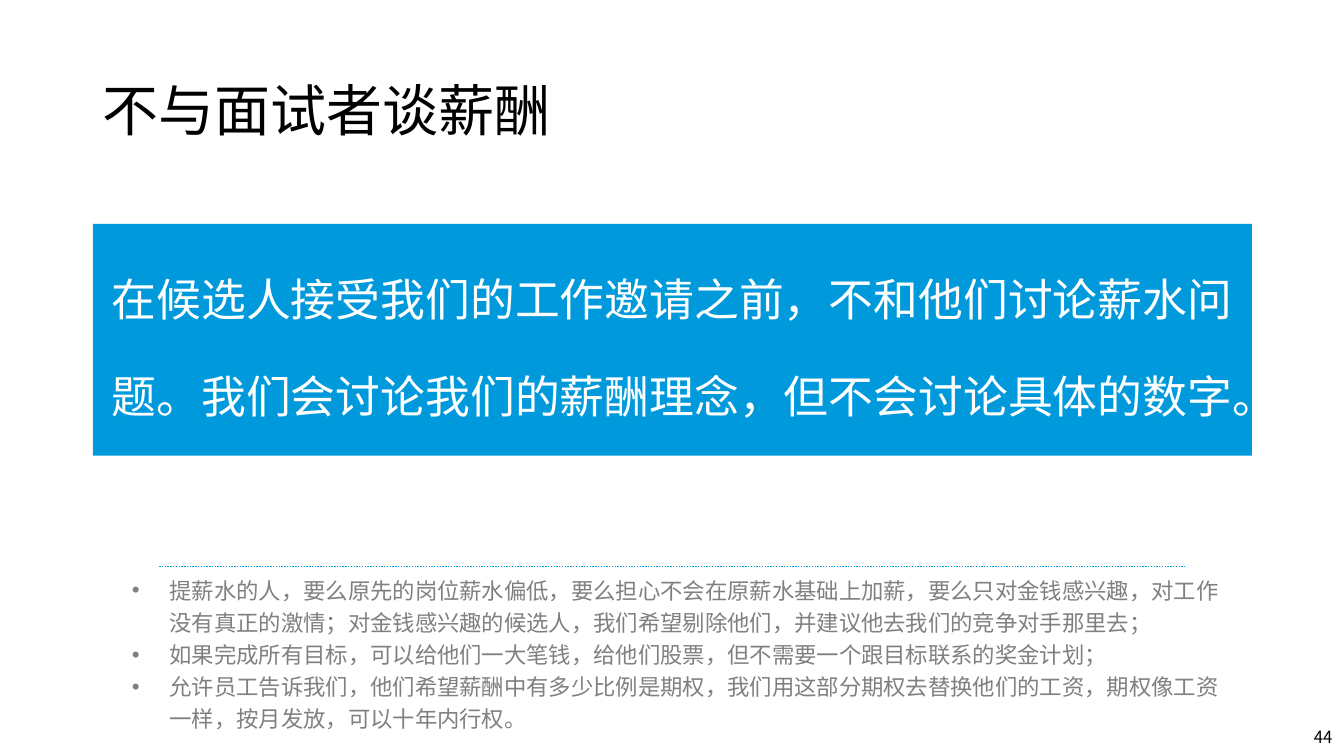
from lxml.etree import SubElement
from pptx import Presentation
from pptx.dml.color import RGBColor
from pptx.enum.dml import MSO_LINE
from pptx.enum.shapes import MSO_CONNECTOR as Connector
from pptx.enum.text import MSO_ANCHOR as Anchor, MSO_AUTO_SIZE as AutoSize, PP_ALIGN as Align
from pptx.oxml.ns import qn
from pptx.util import Cm, Pt

BLUE, GRAY, BLACK, WHITE = "009ADC", "808080", "000000", "FFFFFF"
HANGING = Cm(0.95)

TITLE = "不与面试者谈薪酬"
STATEMENT = "在候选人接受我们的工作邀请之前，不和他们讨论薪水问题。我们会讨论我们的薪酬理念，但不会讨论具体的数字。"
REASONS = [
    "提薪水的人，要么原先的岗位薪水偏低，要么担心不会在原薪水基础上加薪，要么只对金钱感兴趣，对工作没有真正的激情；"
    "对金钱感兴趣的候选人，我们希望剔除他们，并建议他去我们的竞争对手那里去；",
    "如果完成所有目标，可以给他们一大笔钱，给他们股票，但不需要一个跟目标联系的奖金计划；",
    "允许员工告诉我们，他们希望薪酬中有多少比例是期权，我们用这部分期权去替换他们的工资，期权像工资一样，按月发放，可以十年内行权。",
]


def color(value):
    """Turn a hex string into a colour."""
    return RGBColor.from_string(value)


def set_bullet(paragraph, bullet):
    """Give a paragraph a hanging bullet, or none at all."""
    properties = paragraph._p.get_or_add_pPr()
    properties.set("marL", str(HANGING if bullet else 0))
    properties.set("indent", str(-HANGING if bullet else 0))
    if bullet:
        SubElement(properties, qn("a:buFont"), typeface="Arial")
        SubElement(properties, qn("a:buChar"), char="•")
    else:
        SubElement(properties, qn("a:buNone"))


def write(shape, *texts, size, fill, font="Arial", align=Align.LEFT,
          anchor=Anchor.TOP, spacing=1.0, bullet=False):
    """Write each text as one formatted paragraph of the shape."""
    frame = shape.text_frame
    frame.word_wrap = True
    frame.auto_size = AutoSize.NONE
    frame.vertical_anchor = anchor
    for index, text in enumerate(texts):
        paragraph = frame.add_paragraph() if index else frame.paragraphs[0]
        set_bullet(paragraph, bullet)
        paragraph.alignment = align
        paragraph.line_spacing = spacing
        paragraph.space_before = Pt(0)
        run = paragraph.add_run()
        run.text = text
        run.font.name = font
        run.font.size = Pt(size)
        run.font.color.rgb = color(fill)


class SlideBuilder:
    """Hold the current slide and its style."""

    def __init__(self, presentation):
        """Add a slide with a title and two bodies."""
        self.slide = presentation.slides.add_slide(presentation.slide_layouts[3])

    def placeholder(self, index, left, top, width, height, *texts, background=None, **style):
        """Move, fill and write a placeholder."""
        shape = self.slide.placeholders[index]
        shape.left, shape.top, shape.width, shape.height = map(Cm, (left, top, width, height))
        if background:
            shape.fill.solid()
            shape.fill.fore_color.rgb = color(background)
        write(shape, *texts, **style)

    def label(self, left, top, width, height, text, **style):
        """Add a text box."""
        box = self.slide.shapes.add_textbox(*map(Cm, (left, top, width, height)))
        write(box, text, **style)

    def dotted_rule(self, left, right, top):
        """Add a horizontal dotted line."""
        rule = self.slide.shapes.add_connector(
            Connector.STRAIGHT, *map(Cm, (left, top, right, top)))
        rule.line.color.rgb = color(BLUE)
        rule.line.width = Pt(1)
        rule.line.dash_style = MSO_LINE.ROUND_DOT
        SubElement(rule._element.spPr, qn("a:effectLst"))


def main():
    """Build and save the salary slide."""
    presentation = Presentation()
    presentation.slide_width, presentation.slide_height = Cm(33.87), Cm(19.05)
    builder = SlideBuilder(presentation)
    builder.placeholder(0, 2.34, 1.02, 30.3, 3.68, TITLE, size=40, fill=BLACK,
                        anchor=Anchor.MIDDLE, spacing=0.9)
    builder.placeholder(1, 2.34, 5.64, 29.21, 5.84, STATEMENT, background=BLUE,
                        size=32, fill=WHITE, align=Align.CENTER, spacing=1.8)
    builder.placeholder(2, 3.07, 14.27, 27.99, 4.34, *REASONS, size=16, fill=GRAY,
                        spacing=1.2, bullet=True)
    builder.dotted_rule(4.01, 29.85, 14.27)
    builder.label(26.21, 18.06, 7.62, 1.02, "44", size=12, fill=BLACK,
                  font="Noto Sans CJK SC", align=Align.RIGHT, anchor=Anchor.MIDDLE)
    presentation.save("out.pptx")


if __name__ == "__main__":
    main()
